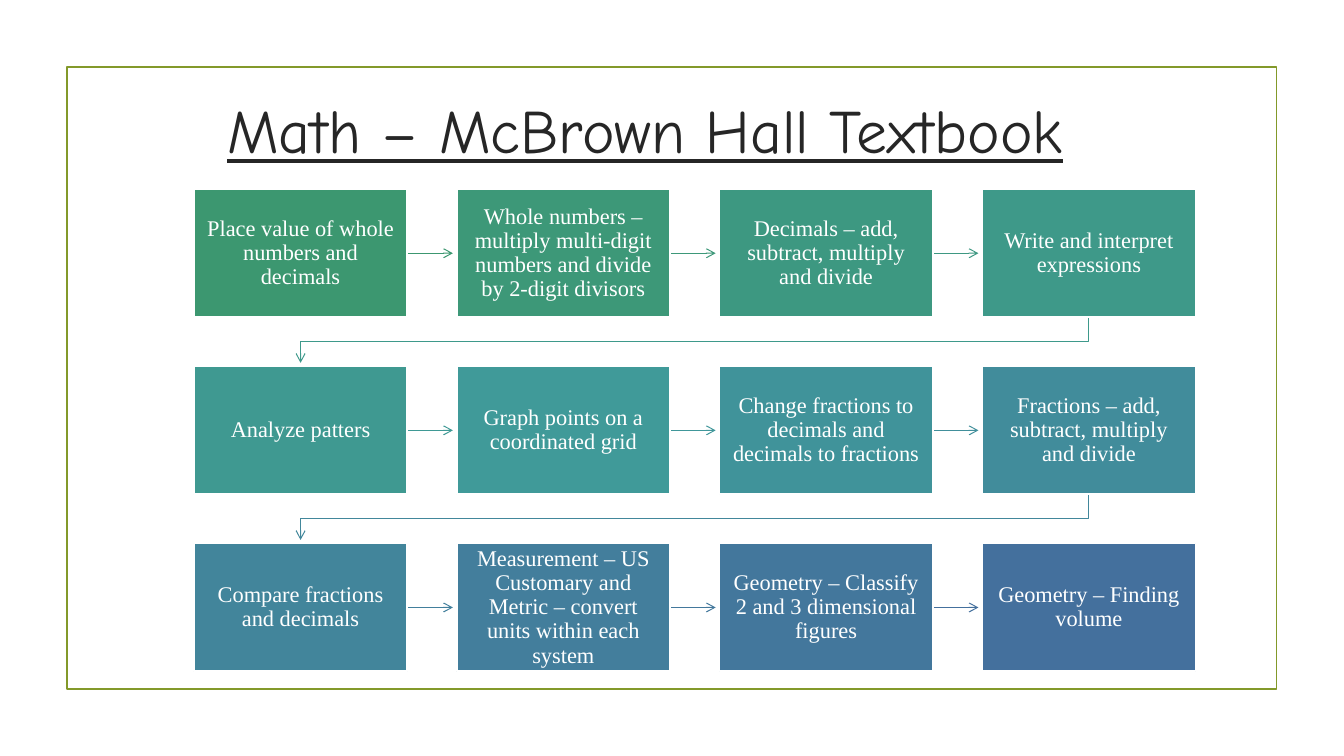
import pptx
import pptx.util
import pptx.dml.color
import pptx.enum.shapes
import pptx.enum.text
import pptx.oxml.ns
from lxml import etree

Pt = pptx.util.Pt
RGB = pptx.dml.color.RGBColor
Shape = pptx.enum.shapes.MSO_SHAPE
Align = pptx.enum.text.PP_ALIGN
Anchor = pptx.enum.text.MSO_ANCHOR
qn = pptx.oxml.ns.qn

WHITE = RGB(0xFF, 0xFF, 0xFF)
DARK = RGB(0x26, 0x26, 0x26)
OLIVE = RGB(0x83, 0x99, 0x2A)

TITLE = "Math – McBrown Hall Textbook"
# topic, box colour, colour of the arrow to the next topic
TOPICS = [
    ("Place value of whole numbers and decimals",
     RGB(0x3C, 0x97, 0x70), RGB(0x3C, 0x97, 0x70)),
    ("Whole numbers – multiply multi-digit numbers and divide by 2-digit divisors",
     RGB(0x3D, 0x98, 0x78), RGB(0x3D, 0x98, 0x79)),
    ("Decimals – add, subtract, multiply and divide",
     RGB(0x3D, 0x98, 0x81), RGB(0x3E, 0x98, 0x82)),
    ("Write and interpret expressions",
     RGB(0x3E, 0x99, 0x89), RGB(0x3E, 0x99, 0x8B)),
    ("Analyze patters",
     RGB(0x3F, 0x99, 0x91), RGB(0x3F, 0x99, 0x95)),
    ("Graph points on a coordinated grid",
     RGB(0x40, 0x9A, 0x99), RGB(0x40, 0x97, 0x9A)),
    ("Change fractions to decimals and decimals to fractions",
     RGB(0x40, 0x93, 0x9A), RGB(0x41, 0x8F, 0x9B)),
    ("Fractions – add, subtract, multiply and divide",
     RGB(0x41, 0x8C, 0x9B), RGB(0x42, 0x87, 0x9B)),
    ("Compare fractions and decimals",
     RGB(0x42, 0x85, 0x9B), RGB(0x42, 0x7F, 0x9C)),
    ("Measurement – US Customary and Metric – convert units within each system",
     RGB(0x43, 0x7E, 0x9C), RGB(0x43, 0x78, 0x9C)),
    ("Geometry – Classify 2 and 3 dimensional figures",
     RGB(0x43, 0x77, 0x9C), RGB(0x44, 0x70, 0x9D)),
    ("Geometry – Finding volume",
     RGB(0x44, 0x70, 0x9D), None),
]

COLS = 4
LEFT, TOP = 138.5, 135.2
WIDE, HIGH = 152.4, 91.4
STEP_X, STEP_Y = 187.7, 126.5
REACH = 32.6  # arrow length across a gap
BEND = 17.3   # drop before a return arrow turns left


def add_box(slide, x, y, text, fill):
    box = slide.shapes.add_shape(Shape.RECTANGLE, Pt(x), Pt(y), Pt(WIDE), Pt(HIGH))
    box.shadow.inherit = False
    box.fill.solid()
    box.fill.fore_color.rgb = fill
    box.line.color.rgb = WHITE
    box.line.width = Pt(1.25)
    frame = box.text_frame
    frame.word_wrap = True
    frame.vertical_anchor = Anchor.MIDDLE
    frame.margin_left = frame.margin_right = Pt(7.4)
    frame.margin_top = frame.margin_bottom = Pt(7.8)
    para = frame.paragraphs[0]
    para.text = text
    para.alignment = Align.CENTER
    para.line_spacing = 0.9
    para.font.name = "Times New Roman"
    para.font.size = Pt(16)
    para.font.color.rgb = WHITE


def style_arrow(arrow, color):
    arrow.line.color.rgb = color
    arrow.line.width = Pt(0.75)
    props = arrow._element.spPr
    etree.SubElement(props.find(qn("a:ln")), qn("a:tailEnd"), type="arrow")
    etree.SubElement(props, qn("a:effectLst"))


def add_next(slide, x, y, color):
    """Arrow from the box at x, y to its right neighbour."""
    start, mid = x + WIDE, y + HIGH / 2
    arrow = slide.shapes.add_connector(
        pptx.enum.shapes.MSO_CONNECTOR.STRAIGHT,
        Pt(start), Pt(mid), Pt(start + REACH), Pt(mid))
    style_arrow(arrow, color)


def add_return(slide, x, y, color):
    """Bent arrow from the box at x, y to the first box of the next row."""
    start, end, base = x + WIDE / 2, LEFT + WIDE / 2, y + HIGH
    turn = base + BEND
    pen = slide.shapes.build_freeform(Pt(start), Pt(base))
    pen.add_line_segments(
        [(Pt(start), Pt(turn)), (Pt(end), Pt(turn)), (Pt(end), Pt(base + REACH))],
        close=False)
    arrow = pen.convert_to_shape()
    arrow.fill.background()
    style_arrow(arrow, color)


def main():
    deck = pptx.Presentation()
    deck.slide_width, deck.slide_height = Pt(960), Pt(540)
    slide = deck.slides.add_slide(deck.slide_layouts[5])

    border = slide.shapes.add_shape(
        Shape.RECTANGLE, Pt(47.8), Pt(48), Pt(864), Pt(444))
    border.shadow.inherit = False
    border.fill.background()
    border.line.color.rgb = OLIVE
    border.line.width = Pt(1.25)

    title = slide.shapes.title
    title.left, title.top, title.width, title.height = Pt(82.8), Pt(40.4), Pt(756), Pt(103)
    frame = title.text_frame
    frame.auto_size = pptx.enum.text.MSO_AUTO_SIZE.NONE
    frame.vertical_anchor = Anchor.MIDDLE
    para = frame.paragraphs[0]
    para.text = TITLE
    para.alignment = Align.CENTER
    para.font.name = "Comic Neue"
    para.font.size = Pt(44)
    para.font.underline = True
    para.font.color.rgb = DARK

    for i, (text, fill, color) in enumerate(TOPICS):
        row, col = divmod(i, COLS)
        x, y = LEFT + col * STEP_X, TOP + row * STEP_Y
        if color is not None:
            join = add_return if col == COLS - 1 else add_next
            join(slide, x, y, color)
        add_box(slide, x, y, text, fill)

    deck.save("out.pptx")


if __name__ == "__main__":
    main()
